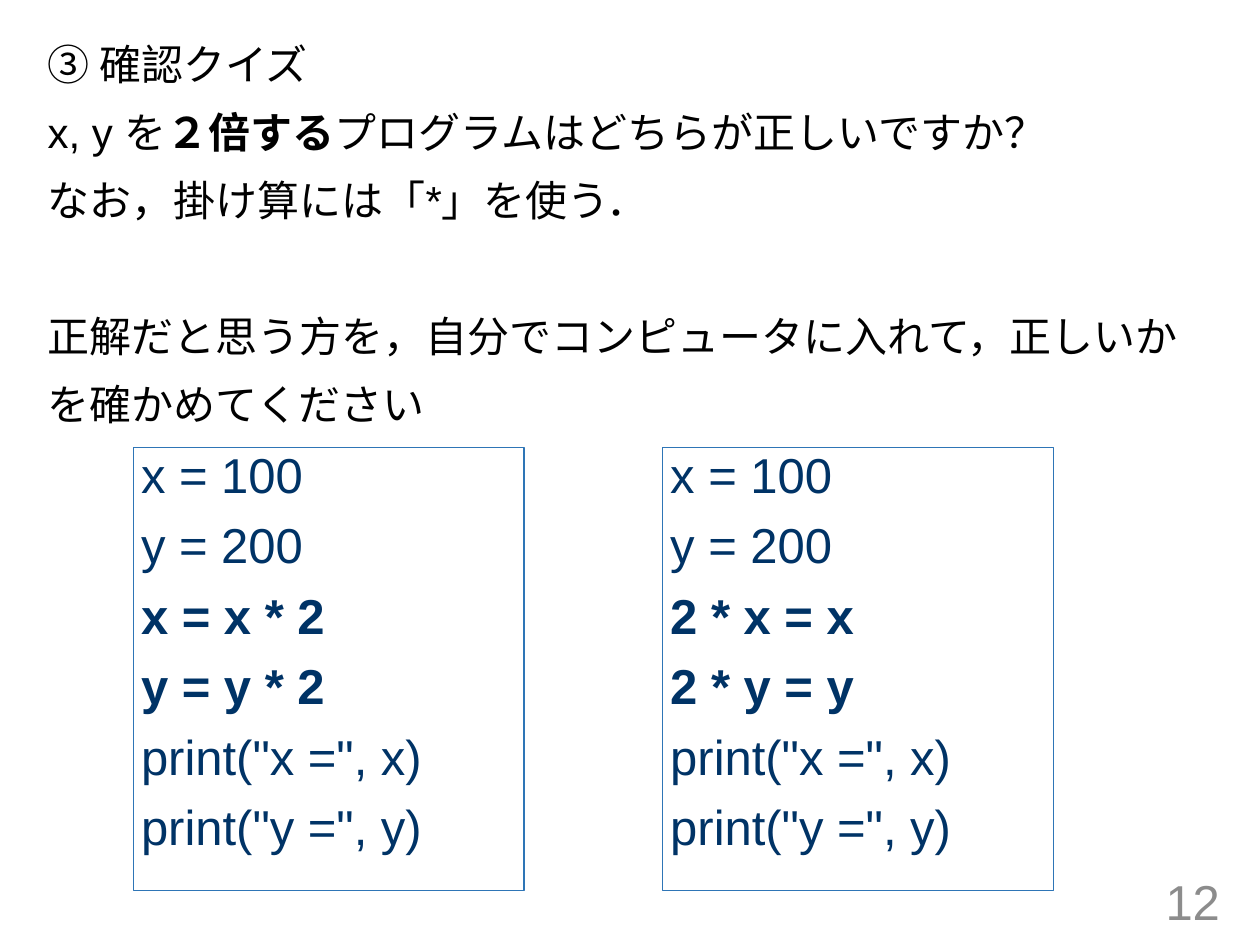
from pptx import Presentation
from pptx.dml.color import RGBColor
from pptx.enum import shapes, text
from pptx.util import Inches, Pt

BLACK = RGBColor(0x00, 0x00, 0x00)
GRAY = RGBColor(0x8C, 0x8C, 0x8C)
NAVY = RGBColor(0x00, 0x33, 0x66)
BLUE = RGBColor(0x2E, 0x75, 0xB6)

QUESTION = [
    (0, [("③ 確認クイズ", False)]),
    (10, [("x, y を", False), ("２倍する", True),
          ("プログラムはどちらが正しいですか？", False)]),
    (10, [("なお，掛け算には「*」を使う．", False)]),
    (48.7, [("正解だと思う方を，自分でコンピュータに入れて，正しいか", False)]),
    (10, [("を確かめてください", False)]),
]
ANSWERS = [["x = x * 2", "y = y * 2"], ["2 * x = x", "2 * y = y"]]


def set_all(obj, values):
    """Set each attribute of obj from a dict."""
    for name, value in values.items():
        setattr(obj, name, value)


def write(tf, paragraphs, size, color, **layout):
    """Fill a text frame with (space before, runs) paragraphs."""
    for i, (before, runs) in enumerate(paragraphs):
        p = tf.add_paragraph() if i else tf.paragraphs[0]
        set_all(p, {"space_before": Pt(before), **layout})
        for words, bold in runs:
            r = p.add_run()
            r.text = words
            set_all(r.font, {"name": "Arial", "size": Pt(size), "bold": bold})
            r.font.color.rgb = color


def add_question(s, box):
    """Place the quiz question."""
    tf = s.shapes.add_textbox(*map(Inches, box)).text_frame
    tf.word_wrap = True
    write(tf, QUESTION, 24, BLACK)


def add_program(s, box, answer):
    """Place one framed candidate program."""
    sp = s.shapes.add_shape(shapes.MSO_SHAPE.RECTANGLE, *map(Inches, box))
    sp.shadow.inherit = False
    sp.fill.background()
    sp.line.color.rgb = BLUE
    sp.line.width = Pt(0.75)
    tf = sp.text_frame
    set_all(tf, {
        "word_wrap": True, "vertical_anchor": text.MSO_ANCHOR.TOP,
        "margin_left": Inches(0.06), "margin_right": Inches(0.06),
        "margin_top": Inches(0.03), "margin_bottom": Inches(0.03)})
    lines = ["x = 100", "y = 200", *answer, 'print("x =", x)', 'print("y =", y)']
    paragraphs = [(10 if i else 0, [(line, line in answer)])
                  for i, line in enumerate(lines)]
    write(tf, paragraphs, 28, NAVY, line_spacing=0.9,
          alignment=text.PP_ALIGN.LEFT)


def add_page_number(s, box):
    """Place the page number."""
    tf = s.shapes.add_textbox(*map(Inches, box)).text_frame
    set_all(tf, {"word_wrap": True, "vertical_anchor": text.MSO_ANCHOR.MIDDLE})
    write(tf, [(0, [("12", False)])], 28, GRAY, alignment=text.PP_ALIGN.RIGHT)


def main():
    """Build the quiz slide."""
    prs = Presentation()
    set_all(prs, {"slide_width": Inches(10), "slide_height": Inches(7.5)})
    s = prs.slides.add_slide(prs.slide_layouts[6])
    add_question(s, (0.28, 0.26, 9.25, 5.83))
    add_page_number(s, (7.53, 6.95, 2.25, 0.4))
    for i, answer in enumerate(ANSWERS):
        add_program(s, (1.06 + 4.2 * i, 3.55, 3.1, 3.52), answer)
    prs.save("out.pptx")


if __name__ == "__main__":
    main()
